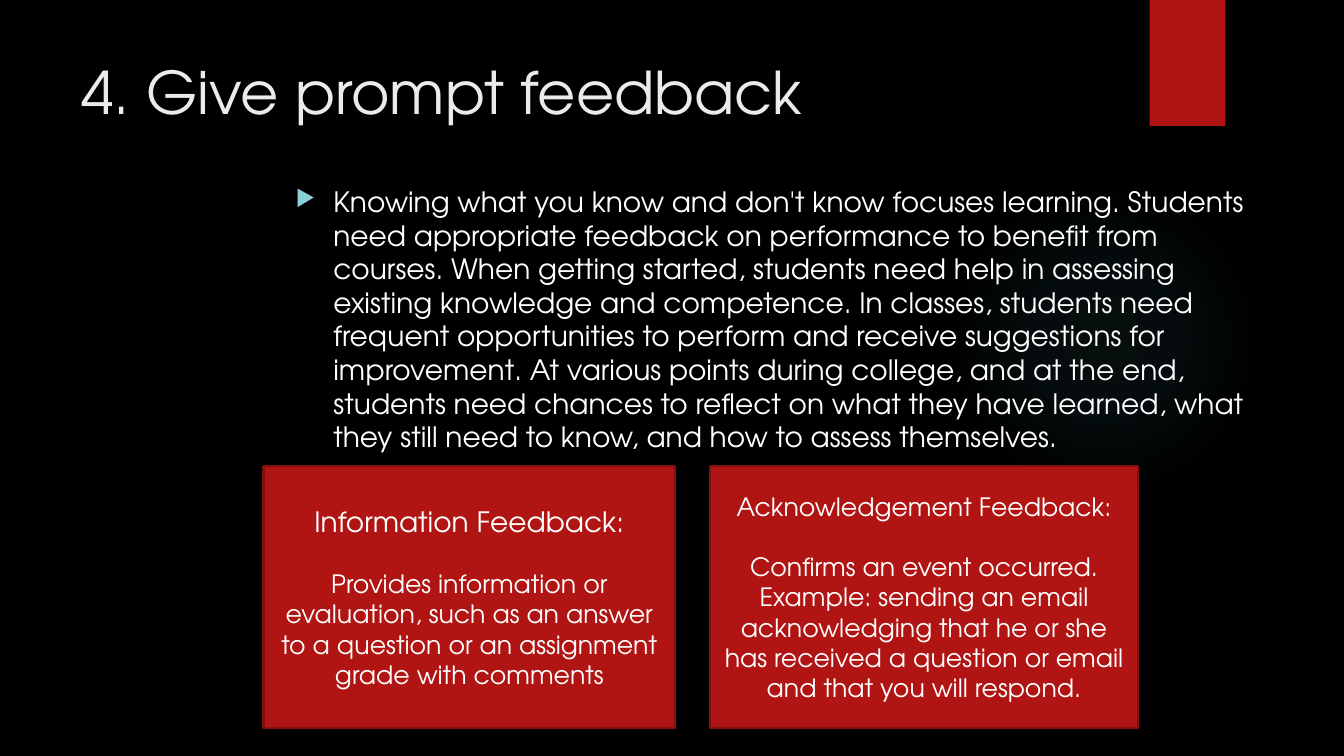
import pptx
import pptx.util
import pptx.dml.color
import pptx.enum.shapes
import pptx.enum.text
import pptx.oxml
import pptx.oxml.ns

PIXEL = 9525
NAMESPACE = pptx.oxml.ns.nsdecls("a")
ALIGN = pptx.enum.text.PP_ALIGN
ANCHOR = pptx.enum.text.MSO_ANCHOR
SHAPE = pptx.enum.shapes.MSO_SHAPE


def px(value):
    return pptx.util.Emu(value * PIXEL)


def color(value):
    return pptx.dml.color.RGBColor.from_string(value)


def element(markup):
    tag, rest = markup[1:].split(" ", 1)
    return pptx.oxml.parse_xml(f"<{tag} {NAMESPACE} {rest}")


class FeedbackSlide:
    font_name = "TeX Gyre Adventor"
    red = "B01513"
    dark_red = "82100E"
    teal = "50B9C1"
    bullet_teal = "8AD0D6"
    white = "FFFFFF"
    title_gray = "EBEBEB"

    def __init__(self, presentation):
        self.slide = presentation.slides.add_slide(presentation.slide_layouts[5])
        background = self.slide.background.fill
        background.solid()
        background.fore_color.rgb = color("000000")

    def style(self, paragraph, size, text_color, align):
        paragraph.alignment = align
        paragraph.font.name = self.font_name
        paragraph.font.size = pptx.util.Pt(size)
        paragraph.font.color.rgb = color(text_color)

    def frame(self, shape, anchor):
        text_frame = shape.text_frame
        text_frame.word_wrap = True
        text_frame.auto_size = pptx.enum.text.MSO_AUTO_SIZE.NONE
        text_frame.vertical_anchor = anchor
        return text_frame

    def shape(self, kind, left, top, width, height):
        shape = self.slide.shapes.add_shape(kind, px(left), px(top), px(width), px(height))
        shape.shadow.inherit = False
        shape.line.fill.background()
        return shape

    def rectangle(self, left, top, width, height):
        shape = self.shape(SHAPE.RECTANGLE, left, top, width, height)
        shape.fill.solid()
        shape.fill.fore_color.rgb = color(self.red)
        return shape

    def glow(self, left, top, size):
        shape = self.shape(SHAPE.OVAL, left, top, size, size)
        stops = "".join(
            f'<a:gs pos="{position * 1000}"><a:srgbClr val="{self.teal}">'
            f'<a:alpha val="{opacity * 1000}"/></a:srgbClr></a:gs>'
            for position, opacity in ((0, 7), (36, 6), (69, 0), (100, 0))
        )
        gradient = element(
            f'<a:gradFill rotWithShape="1"><a:gsLst>{stops}</a:gsLst><a:path path="circle">'
            '<a:fillToRect l="50000" t="50000" r="50000" b="50000"/></a:path></a:gradFill>'
        )
        shape._element.spPr.find(pptx.oxml.ns.qn("a:prstGeom")).addnext(gradient)

    def ribbon(self, left, top, width, height):
        shape = self.rectangle(left, top, width, height)
        effects = shape._element.spPr.find(pptx.oxml.ns.qn("a:effectLst"))
        effects.append(element(
            '<a:outerShdw blurRad="38100" dist="25400" dir="5400000" rotWithShape="0">'
            '<a:srgbClr val="000000"><a:alpha val="45000"/></a:srgbClr></a:outerShdw>'
        ))

    def title(self, text, left, top, width, height):
        title = self.slide.shapes.title
        title.left, title.top, title.width, title.height = map(px, (left, top, width, height))
        text_frame = self.frame(title, ANCHOR.TOP)
        text_frame.text = text
        self.style(text_frame.paragraphs[0], 42, self.title_gray, ALIGN.LEFT)

    def bullet_text(self, text, left, top, width, height):
        box = self.slide.shapes.add_textbox(px(left), px(top), px(width), px(height))
        text_frame = self.frame(box, ANCHOR.TOP)
        text_frame.text = text
        paragraph = text_frame.paragraphs[0]
        properties = paragraph._p.get_or_add_pPr()
        properties.set("marL", str(px(36)))
        properties.set("indent", str(px(-36)))
        for markup in (
            f'<a:buClr ><a:srgbClr val="{self.bullet_teal}"/></a:buClr>',
            '<a:buSzPct val="80000"/>',
            '<a:buChar char="▶"/>',
        ):
            properties.append(element(markup))
        self.style(paragraph, 20, self.white, ALIGN.LEFT)

    def card(self, heading, heading_size, text, left, top, width, height):
        shape = self.rectangle(left, top, width, height)
        shape.line.color.rgb = color(self.dark_red)
        shape.line.width = pptx.util.Pt(1.5)
        text_frame = self.frame(shape, ANCHOR.MIDDLE)
        text_frame.text = heading
        self.style(text_frame.paragraphs[0], heading_size, self.white, ALIGN.CENTER)
        paragraph = text_frame.add_paragraph()
        paragraph.text = text
        paragraph.space_before = pptx.util.Pt(21.6)
        self.style(paragraph, 18, self.white, ALIGN.CENTER)


def main():
    presentation = pptx.Presentation()
    presentation.slide_width = px(1280)
    presentation.slide_height = px(720)
    feedback = FeedbackSlide(presentation)
    feedback.glow(903, 176, 296)
    feedback.ribbon(1095, 0, 72, 120)
    feedback.title("4. Give prompt feedback", 68, 48, 988, 147)
    feedback.bullet_text(
        "Knowing what you know and don't know focuses learning. Students need appropriate "
        "feedback on performance to benefit from courses. When getting started, students need "
        "help in assessing existing knowledge and competence. In classes, students need frequent "
        "opportunities to perform and receive suggestions for improvement. At various points "
        "during college, and at the end, students need chances to reflect on what they have "
        "learned, what they still need to know, and how to assess themselves.",
        272, 171, 936, 396,
    )
    feedback.card(
        "Information Feedback:", 20,
        "Provides information or evaluation, such as an answer to a question or an assignment "
        "grade with comments",
        251, 444, 392, 249,
    )
    feedback.card(
        "Acknowledgement Feedback:", 18,
        "Confirms an event occurred. Example: sending an email acknowledging that he or she has "
        "received a question or email and that you will respond.",
        676, 444, 408, 249,
    )
    presentation.save("out.pptx")


if __name__ == "__main__":
    main()
